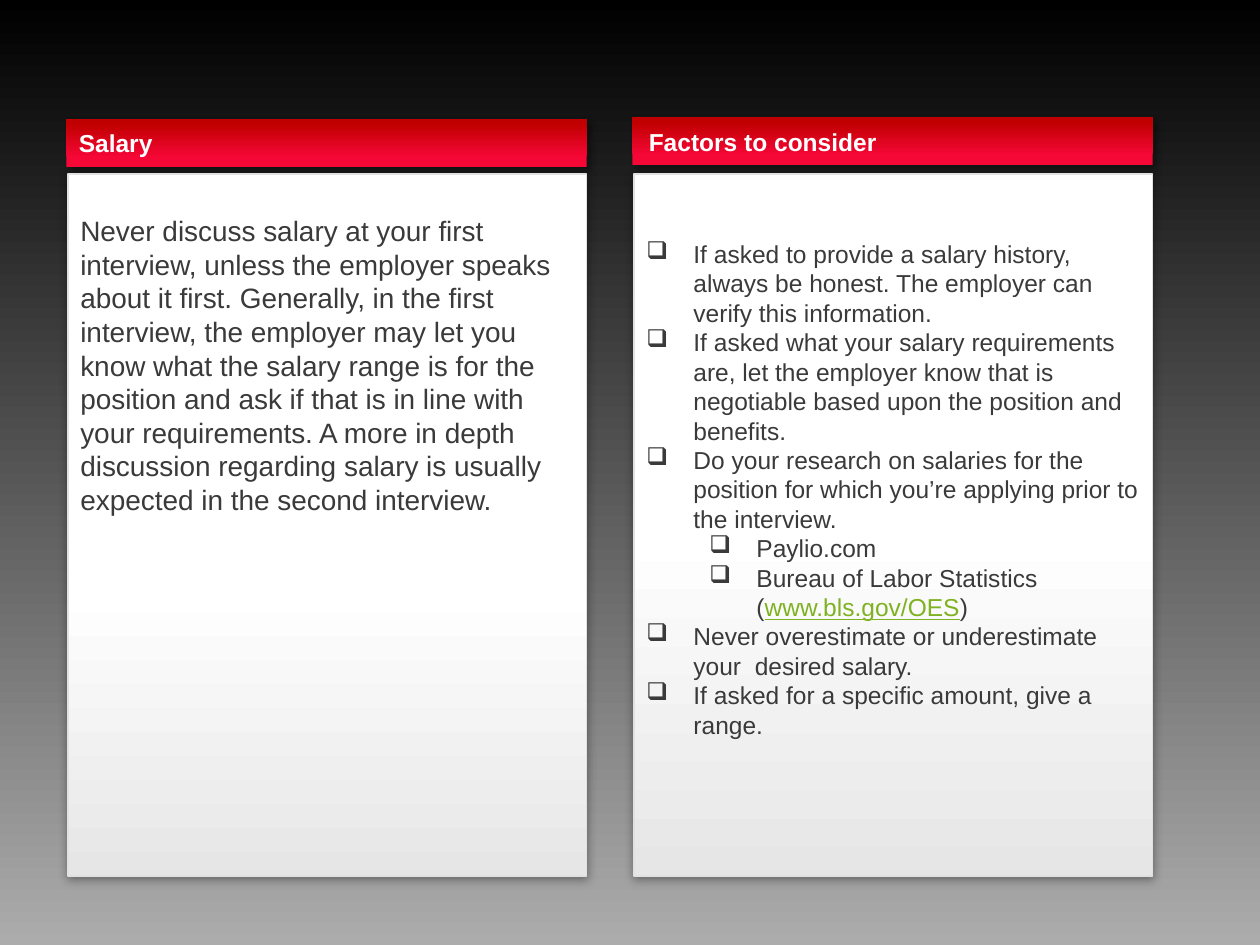
import pptx
import pptx.dml.color
import pptx.enum.shapes
import pptx.enum.text
import pptx.oxml
import pptx.oxml.ns
import pptx.util
from lxml import etree

Cm, Pt = pptx.util.Cm, pptx.util.Pt

COLORS = {
    "black": "000000", "gray": "ACACAC", "red": "F50736", "dark red": "C00000",
    "panel": "E6E6E6", "white": "FFFFFF", "border": "E1E1E1",
    "text": "3A3A3A", "link": "7EB220",
}
FONT = "Arial"

# Each paragraph: bullet level (None for no bullet), then runs of (text, color)
SALARY = [(None, [(
    "Never discuss salary at your first interview, unless the employer speaks about it first. "
    "Generally, in the first interview, the employer may let you know what the salary range is "
    "for the position and ask if that is in line with your requirements. A more in depth "
    "discussion regarding salary is usually expected in the second interview.", "text")])]
FACTORS = [
    (0, [("If asked to provide a salary history, always be honest. "
          "The employer can verify this information.", "text")]),
    (0, [("If asked what your salary requirements are, let the employer know that is "
          "negotiable based upon the position and benefits.", "text")]),
    (0, [("Do your research on salaries for the position for which you’re applying "
          "prior to the interview.", "text")]),
    (1, [("Paylio.com", "text")]),
    (1, [("Bureau of Labor Statistics (", "text"), ("www.bls.gov/OES", "link"), (")", "text")]),
    (0, [("Never overestimate or underestimate your  desired salary.", "text")]),
    (0, [("If asked for a specific amount, give a range.", "text")]),
]
# Positions in cm; "inset" is the space above the body text
COLUMNS = [
    {"left": 12.78, "header top": 2.36, "title": "Factors to consider", "title box": True,
     "body": FACTORS, "size": 14, "inset": 1.31, "fade end": 0.49},
    {"left": 1.37, "header top": 2.39, "title": "Salary", "title box": False,
     "body": SALARY, "size": 16, "inset": 0.8, "fade end": 0.41},
]
HEADER_WIDTH, HEADER_HEIGHT = 10.49, 0.97
BODY_TOP, BODY_WIDTH, BODY_HEIGHT = 3.51, 10.46, 14.15
HANGING, LEVEL_STEP = 0.95, 1.27


def rgb(name):
    return pptx.dml.color.RGBColor.from_string(COLORS[name])


def fade_upward(fill, *stops):
    fill.gradient()
    fill.gradient_angle = 90
    for stop, (position, color) in zip(fill.gradient_stops, stops):
        stop.position = position
        stop.color.rgb = rgb(color)


def add_shadow(shape, opacity, blur, distance, angle):
    shape.shadow.inherit = False
    effects = shape._element.spPr.find(pptx.oxml.ns.qn("a:effectLst"))
    effects.append(pptx.oxml.parse_xml(
        f'<a:outerShdw {pptx.oxml.ns.nsdecls("a")} blurRad="{Pt(blur)}" dist="{Pt(distance)}" '
        f'dir="{angle * 60000}" algn="ctr" rotWithShape="0"><a:srgbClr val="{COLORS["black"]}">'
        f'<a:alpha val="{opacity * 1000}"/></a:srgbClr></a:outerShdw>'))


def add_box(page, left, top, width, height):
    box = page.shapes.add_shape(pptx.enum.shapes.MSO_SHAPE.RECTANGLE,
                                Cm(left), Cm(top), Cm(width), Cm(height))
    box.text_frame.word_wrap = True
    return box


def add_span(para, text, size, color, bold=False):
    span = para.add_run()
    span.text = text
    span.font.name = FONT
    span.font.size = Pt(size)
    span.font.bold = bold
    span.font.color.rgb = rgb(color)
    span.font.underline = color == "link"


def set_bullet(para, level):
    para.level = level
    properties = para._p.get_or_add_pPr()
    properties.set("marL", str(Cm(HANGING + level * LEVEL_STEP)))
    properties.set("indent", str(-Cm(HANGING)))
    etree.SubElement(properties, pptx.oxml.ns.qn("a:buChar")).set("char", "❑")


def add_header(page, column):
    header = add_box(page, column["left"] - 0.03, column["header top"],
                     HEADER_WIDTH, HEADER_HEIGHT)
    fade_upward(header.fill, (0.2, "red"), (0.89, "dark red"))
    header.line.fill.background()
    add_shadow(header, 40, 4, 3, 45)
    return header


def add_title(page, column, holder):
    if column["title box"]:
        holder = page.shapes.add_textbox(Cm(column["left"] + 0.3), Cm(2.57), Cm(7.9), Cm(0.61))
        holder.text_frame.margin_left = holder.text_frame.margin_right = 0
    frame = holder.text_frame
    frame.word_wrap = True
    frame.vertical_anchor = pptx.enum.text.MSO_ANCHOR.MIDDLE
    para = frame.paragraphs[0]
    para.alignment = pptx.enum.text.PP_ALIGN.LEFT
    if column["title box"]:
        para.line_spacing = 0.95
    add_span(para, column["title"], 14, "white", bold=True)


def add_body(page, column):
    body = add_box(page, column["left"], BODY_TOP, BODY_WIDTH, BODY_HEIGHT)
    fade_upward(body.fill, (0, "panel"), (column["fade end"], "white"))
    body.line.color.rgb = rgb("border")
    body.line.width = Pt(0.75)
    add_shadow(body, 35, 5, 1.8, 90)
    frame = body.text_frame
    frame.vertical_anchor = pptx.enum.text.MSO_ANCHOR.TOP
    frame.margin_top = Cm(column["inset"])
    for index, (level, spans) in enumerate(column["body"]):
        para = frame.add_paragraph() if index else frame.paragraphs[0]
        para.alignment = pptx.enum.text.PP_ALIGN.LEFT
        if level is not None:
            set_bullet(para, level)
        for text, color in spans:
            add_span(para, text, column["size"], color)


def main():
    deck = pptx.Presentation()
    deck.slide_width, deck.slide_height = Cm(25.4), Cm(19.05)
    page = deck.slides.add_slide(deck.slide_layouts[6])
    fade_upward(page.background.fill, (0, "gray"), (1, "black"))
    for column in COLUMNS:
        header = add_header(page, column)
        add_body(page, column)
        add_title(page, column, header)
    deck.save("out.pptx")


if __name__ == "__main__":
    main()
